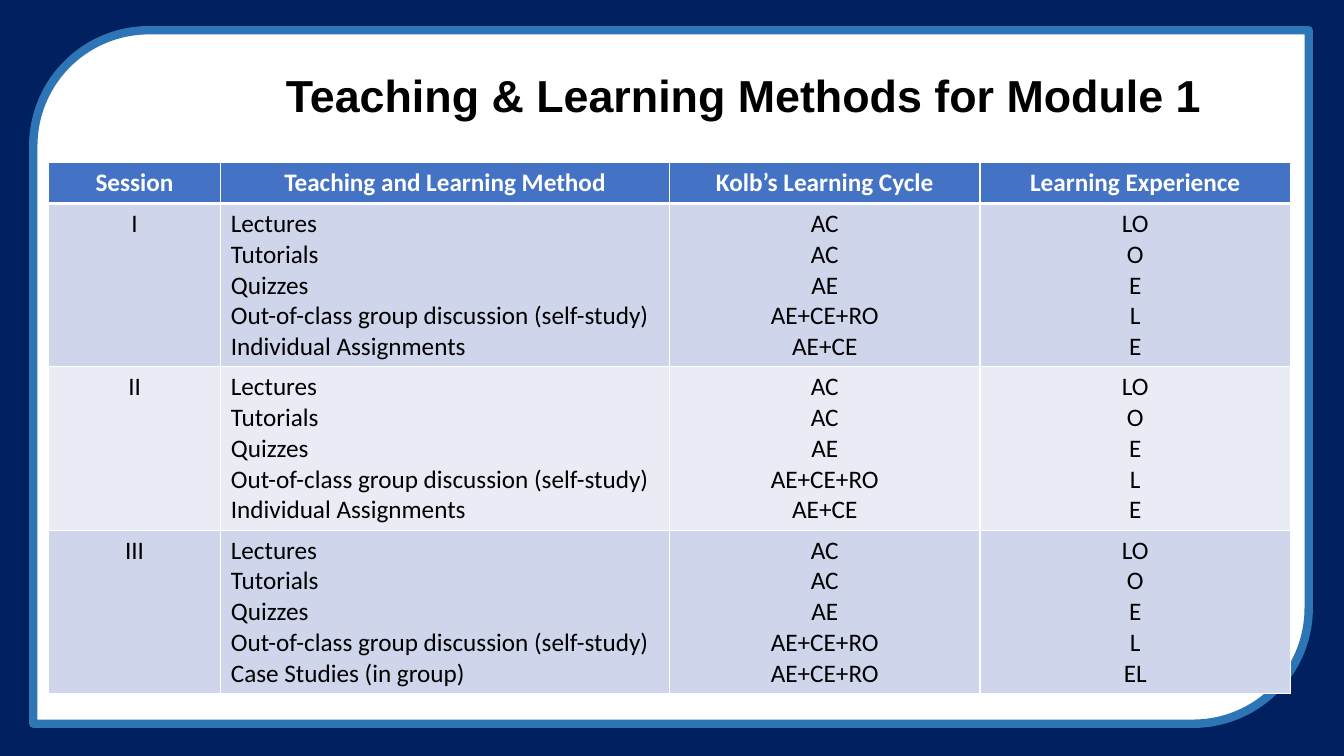
from lxml import etree
from pptx import Presentation
from pptx.dml.color import RGBColor
from pptx.enum.shapes import MSO_SHAPE
from pptx.enum.text import MSO_ANCHOR, PP_ALIGN
from pptx.oxml.ns import qn
from pptx.util import Pt

LEFT, CENTER = PP_ALIGN.LEFT, PP_ALIGN.CENTER
MIDDLE = MSO_ANCHOR.MIDDLE
RECT, FRAME = MSO_SHAPE.RECTANGLE, MSO_SHAPE.ROUND_2_DIAG_RECTANGLE

# Content
TITLE = "Teaching & Learning Methods for Module 1"
HEADS = ["Session", "Teaching and Learning Method",
         "Kolb’s Learning Cycle", "Learning Experience"]
BASE = [
    ("Lectures", "AC", "LO"),
    ("Tutorials", "AC", "O"),
    ("Quizzes", "AE", "E"),
    ("Out-of-class group discussion (self-study)", "AE+CE+RO", "L"),
]
TASK = ("Individual Assignments", "AE+CE", "E")
CASE = ("Case Studies (in group)", "AE+CE+RO", "EL")
SESSIONS = [("I", TASK), ("II", TASK), ("III", CASE)]

# Layout, 100 px to the inch
PX = 9144
WIDE, HIGH = 1333, 750
COLS = [171, 445, 308, 308]
HEAD_H, ROW_H = 41, 162
NAVY, BLUE, WHITE, BLACK = "002060", "2E75B6", "FFFFFF", "000000"
HEAD_FILL, BANDS = "4472C4", ["CFD5EA", "E9EBF5"]


def color(code):
    return RGBColor.from_string(code)


def px(*sizes):
    return [size * PX for size in sizes]


def write(frame, lines, size=18, font="Calibri", ink=BLACK, bold=False,
          align=CENTER, space=None):
    frame.word_wrap = True
    for i, line in enumerate(lines):
        para = frame.add_paragraph() if i else frame.paragraphs[0]
        para.alignment = align
        para.line_spacing = space
        run = para.add_run()
        run.text = line
        run.font.size, run.font.name = Pt(size), font
        run.font.bold = bold
        run.font.color.rgb = color(ink)


def panel(kind, box, fill, line=None, width=0):
    shape = slide.shapes.add_shape(kind, *px(*box))
    shape.shadow.inherit = False
    shape.fill.solid()
    shape.fill.fore_color.rgb = color(fill)
    if line:
        shape.line.color.rgb = color(line)
        shape.line.width = Pt(width)
    else:
        shape.line.fill.background()


def border(cell, top, bottom):
    props = cell._tc.get_or_add_tcPr()
    for side, width in zip("LRTB", (1, 1, top, bottom)):
        line = etree.SubElement(props, qn("a:ln" + side), w=str(Pt(width)))
        fill = etree.SubElement(line, qn("a:solidFill"))
        etree.SubElement(fill, qn("a:srgbClr"), val=WHITE)


deck = Presentation()
deck.slide_width, deck.slide_height = px(WIDE, HIGH)
slide = deck.slides.add_slide(deck.slide_layouts[6])

# Backdrop and frame
panel(RECT, (0, 0, WIDE, HIGH), NAVY)
panel(FRAME, (33, 30, 1265, 688), WHITE, BLUE, 6)

# Title
title = slide.shapes.add_textbox(*px(196, 49, 1084, 97)).text_frame
title.vertical_anchor = MIDDLE
write(title, [TITLE], size=32, font="Arial", bold=True, space=0.9)

# Table: each session becomes one row of stacked lines
rows = [[[head] for head in HEADS]]
for name, last in SESSIONS:
    rows.append([[name], *zip(*BASE, last)])
tall = [HEAD_H] + [ROW_H] * len(SESSIONS)
table = slide.shapes.add_table(
    len(rows), len(COLS), *px(48, 161, sum(COLS), sum(tall))).table
for col, width in zip(table.columns, COLS):
    col.width = width * PX
for r, row in enumerate(rows):
    table.rows[r].height = tall[r] * PX
    head = r == 0
    for c, lines in enumerate(row):
        cell = table.cell(r, c)
        border(cell, 3 if r == 1 else 1, 3 if head else 1)
        cell.fill.solid()
        cell.fill.fore_color.rgb = color(
            HEAD_FILL if head else BANDS[(r - 1) % 2])
        write(cell.text_frame, lines, bold=head,
              ink=WHITE if head else BLACK,
              align=LEFT if c == 1 and not head else CENTER)

deck.save("out.pptx")
